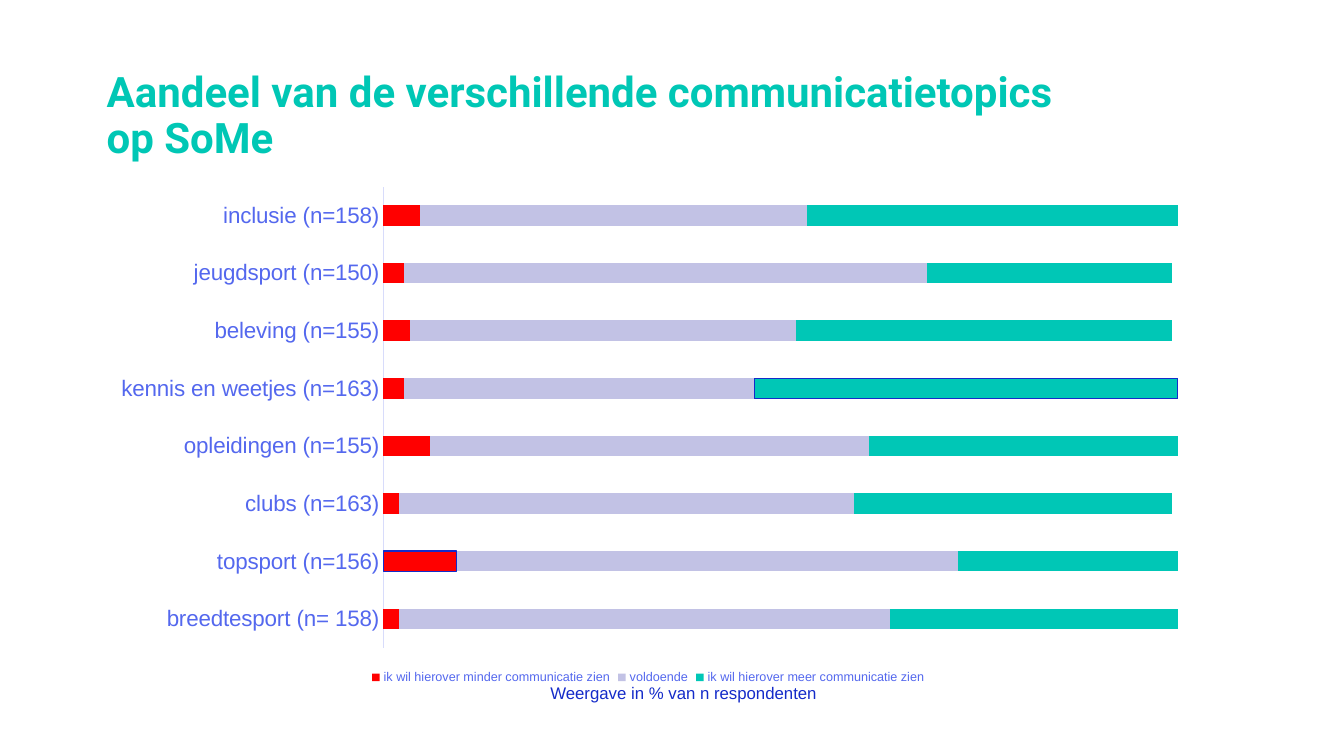
import pptx
import pptx.chart.data
import pptx.dml.color
import pptx.enum.chart
import pptx.enum.text
import pptx.util
import lxml.etree

Pt = pptx.util.Pt
RGB = pptx.dml.color.RGBColor

# Content
TITLE = "Aandeel van de verschillende communicatietopics op SoMe"
NOTE = "Weergave in % van n respondenten"
TOPICS = ["breedtesport (n= 158)", "topsport (n=156)", "clubs (n=163)",
          "opleidingen (n=155)", "kennis en weetjes (n=163)",
          "beleving (n=155)", "jeugdsport (n=150)", "inclusie (n=158)"]

TEAL = RGB(0x00, 0xC7, 0xB5)
BAR_TEAL = RGB(0x00, 0xC7, 0xB6)
RED = RGB(0xFF, 0x00, 0x00)
LILAC = RGB(0xC2, 0xC2, 0xE5)
NAVY = RGB(0x14, 0x2B, 0xC9)
BLUE = RGB(0x54, 0x68, 0xEE)
PALE = RGB(0xD8, 0xDC, 0xFB)

# Name, values, colour, index of the outlined bar
SERIES = [
    ("ik wil hierover minder communicatie zien",
     [3, 14, 3, 9, 4, 5, 4, 7], RED, 1),
    ("voldoende", [94, 96, 87, 84, 67, 74, 100, 74], LILAC, None),
    ("ik wil hierover meer communicatie zien",
     [55, 42, 61, 59, 81, 72, 47, 71], BAR_TEAL, 4),
]
AXIS_MAX = 152

# Left, top, width, height in points
TITLE_BOX = (69, 42, 731.5, 77.5)
CHART_BOX = (69, 126, 788, 366)
NOTE_BOX = (386, 484, 206.5, 21.8)
PLOT = {"x": 0.26, "y": 0.02, "w": 0.72, "h": 0.9}  # shares of the chart


def set_font(font, size, color, name="Arial", bold=False):
    font.size, font.name, font.bold = Pt(size), name, bold
    font.color.rgb = color


def add_run(p, text, *style):
    r = p.add_run()
    r.text = text
    set_font(r.font, *style)


def place_plot(chart):
    area = chart._chartSpace.chart.plotArea
    ns = area.nsmap["c"]
    for old in area.findall(f"{{{ns}}}layout"):
        area.remove(old)
    layout = lxml.etree.Element(f"{{{ns}}}layout")
    manual = lxml.etree.SubElement(layout, f"{{{ns}}}manualLayout")
    settings = [("layoutTarget", "inner"), ("xMode", "edge"), ("yMode", "edge")]
    for tag, val in settings + list(PLOT.items()):
        lxml.etree.SubElement(manual, f"{{{ns}}}{tag}").set("val", str(val))
    area.insert(0, layout)


prs = pptx.Presentation()
prs.slide_width, prs.slide_height = Pt(960), Pt(540)
s = prs.slides.add_slide(prs.slide_layouts[5])

# Title
sp = s.shapes.title
sp.left, sp.top, sp.width, sp.height = map(Pt, TITLE_BOX)
tf = sp.text_frame
tf.word_wrap = True
tf.auto_size = pptx.enum.text.MSO_AUTO_SIZE.NONE
tf.vertical_anchor = pptx.enum.text.MSO_ANCHOR.BOTTOM
p = tf.paragraphs[0]
p.alignment = pptx.enum.text.PP_ALIGN.LEFT
p.line_spacing = 0.9
add_run(p, TITLE, 30, TEAL, "Roboto", True)

# Chart
data = pptx.chart.data.CategoryChartData(number_format="0")
data.categories = TOPICS
for name, values, _, _ in SERIES:
    data.add_series(name, values)
chart = s.shapes.add_chart(pptx.enum.chart.XL_CHART_TYPE.BAR_STACKED,
                           *map(Pt, CHART_BOX), data).chart
set_font(chart.font, 10, NAVY)
chart.has_title = False
place_plot(chart)

plot = chart.plots[0]
plot.gap_width, plot.overlap, plot.vary_by_categories = 182, 100, False
for series, (_, _, color, outlined) in zip(plot.series, SERIES):
    series.format.fill.solid()
    series.format.fill.fore_color.rgb = color
    series.invert_if_negative = False
    if outlined is not None:
        bar = series.points[outlined].format
        bar.fill.solid()
        bar.fill.fore_color.rgb = color
        bar.line.color.rgb = NAVY
        bar.line.width = Pt(0.75)

# Axes and legend
axis = chart.category_axis
axis.major_tick_mark = pptx.enum.chart.XL_TICK_MARK.NONE
axis.format.line.color.rgb = PALE
axis.format.line.width = Pt(0.75)
set_font(axis.tick_labels.font, 16, BLUE)
axis = chart.value_axis
axis.minimum_scale, axis.maximum_scale = 0, AXIS_MAX
axis.has_major_gridlines = False
axis.visible = False
chart.has_legend = True
chart.legend.position = pptx.enum.chart.XL_LEGEND_POSITION.BOTTOM
chart.legend.include_in_layout = False
set_font(chart.legend.font, 9, BLUE)

# Note under the chart
tf = s.shapes.add_textbox(*map(Pt, NOTE_BOX)).text_frame
tf.word_wrap = False
tf.auto_size = pptx.enum.text.MSO_AUTO_SIZE.SHAPE_TO_FIT_TEXT
add_run(tf.paragraphs[0], NOTE, 12, NAVY)

prs.save("out.pptx")
